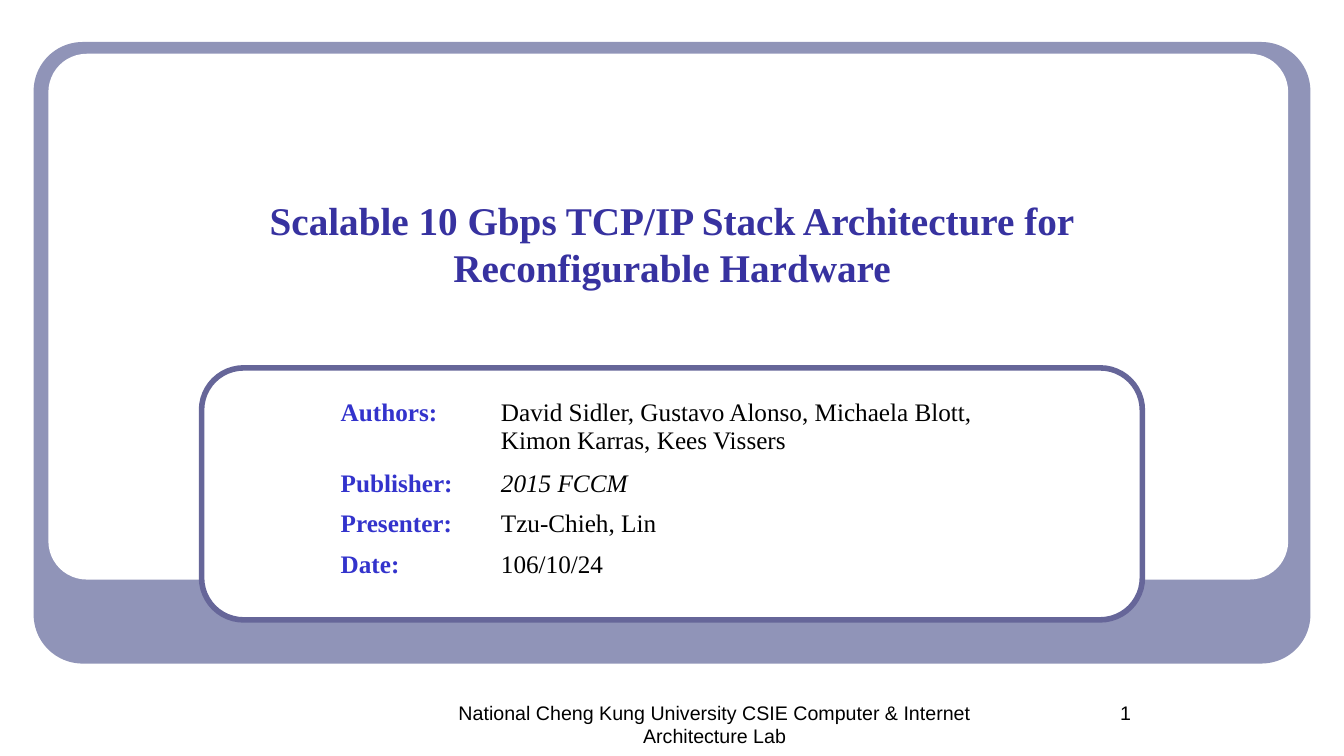
from dataclasses import dataclass

from pptx import Presentation
from pptx.dml.color import RGBColor
from pptx.enum.shapes import MSO_SHAPE
from pptx.enum.text import MSO_ANCHOR, PP_ALIGN
from pptx.util import Inches, Pt

ROUNDED = MSO_SHAPE.ROUNDED_RECTANGLE
MIDDLE = MSO_ANCHOR.MIDDLE
TOP = MSO_ANCHOR.TOP
CENTER = PP_ALIGN.CENTER
LEFT = PP_ALIGN.LEFT
COLUMNS, ROWS = 40, 90
COLUMN, ROW = Inches(13.333) / COLUMNS, Inches(7.5) / ROWS


@dataclass(frozen=True)
class Theme:
    """Colours, fonts and type sizes of the deck."""
    white: str = "FFFFFF"
    band: str = "9094B8"
    outline: str = "666699"
    title: str = "3732A0"
    label: str = "3333CC"
    ink: str = "000000"
    serif: str = "Times New Roman"
    sans: str = "Arial"
    title_size: int = 28
    body_size: int = 18
    footer_size: int = 14


THEME = Theme()
DETAILS = [
    ("Authors:", ["David Sidler, Gustavo Alonso, Michaela Blott,",
                  "Kimon Karras, Kees Vissers"], False, 0.65),
    ("Publisher:", ["2015 FCCM"], True, 0.38),
    ("Presenter:", ["Tzu-Chieh, Lin"], False, 0.41),
    ("Date:", ["106/10/24"], False, 0.41),
]


def grid(left, top, width, height):
    """Turn grid columns and rows into slide lengths."""
    return (round(left * COLUMN), round(top * ROW),
            round(width * COLUMN), round(height * ROW))


def write(tf, lines, size, color, font=THEME.serif, bold=False, italic=False,
          align=LEFT, anchor=TOP):
    """Fill a text frame with one formatted paragraph per line."""
    tf.word_wrap = True
    tf.vertical_anchor = anchor
    for i, line in enumerate(lines):
        p = tf.paragraphs[0] if i == 0 else tf.add_paragraph()
        p.alignment = align
        p.text = line
        for r in p.runs:
            r.font.name, r.font.size = font, Pt(size)
            r.font.bold, r.font.italic = bold, italic
            r.font.color.rgb = RGBColor.from_string(color)


def add_panel(s, box, radius, fill, line=None):
    """Draw one rounded panel in the box."""
    sp = s.shapes.add_shape(ROUNDED, *grid(*box))
    sp.shadow.inherit = False
    sp.adjustments[0] = radius
    sp.fill.solid()
    sp.fill.fore_color.rgb = RGBColor.from_string(fill)
    if line:
        sp.line.color.rgb = RGBColor.from_string(line)
        sp.line.width = Pt(4)
    else:
        sp.line.fill.background()
    return sp


def add_title(s, box, lines, backdrop):
    """Place the title in the box, in front of the backdrop."""
    sp = s.shapes.title
    sp.left, sp.top, sp.width, sp.height = grid(*box)
    backdrop.element.addnext(sp.element)
    write(sp.text_frame, lines, THEME.title_size, THEME.title,
          bold=True, align=CENTER, anchor=MIDDLE)
    sp.text_frame.margin_top = Inches(0.52)
    for p in sp.text_frame.paragraphs:
        p.space_before = Pt(0)


def add_details(s, box, details):
    """Lay out labels and values as a plain table in the box."""
    left, top, width, height = grid(*box)
    table = s.shapes.add_table(len(details), 2, left, top, width, height).table
    table.first_row = table.horz_banding = False
    table.columns[0].width = Inches(1.59)
    table.columns[1].width = width - Inches(1.59)
    for i, (label, lines, italic, row_height) in enumerate(details):
        table.rows[i].height = Inches(row_height)
        name, value = table.cell(i, 0), table.cell(i, 1)
        name.fill.background()
        value.fill.background()
        write(name.text_frame, [label], THEME.body_size, THEME.label, bold=True)
        write(value.text_frame, lines, THEME.body_size, THEME.ink, italic=italic)


def add_footer(s, box, text):
    """Write one centred footer text in the box."""
    sp = s.shapes.add_textbox(*grid(*box))
    write(sp.text_frame, [text], THEME.footer_size, THEME.ink,
          font=THEME.sans, align=CENTER)


def add_cover(prs):
    """Build the cover slide."""
    s = prs.slides.add_slide(prs.slide_layouts[5])
    add_panel(s, (1, 5, 38, 74), 0.079, THEME.band)
    add_panel(s, (1.44, 6.4, 36.9, 62.6), 0.073, THEME.white)
    card = add_panel(s, (6, 43.8, 28, 30), 0.167, THEME.white, THEME.outline)
    add_title(s, (3, 11.3, 34, 29.8),
              ["Scalable 10 Gbps TCP/IP Stack Architecture for",
               "Reconfigurable Hardware"], card)
    add_footer(s, (12.45, 82.8, 17.64, 6),
               "National Cheng Kung University CSIE Computer & Internet "
               "Architecture Lab")
    add_footer(s, (30, 82.8, 7, 6), "1")
    add_details(s, (9.84, 46.9, 20.07, 22.2), DETAILS)


def main():
    """Create and save the deck."""
    prs = Presentation()
    prs.slide_width, prs.slide_height = Inches(13.333), Inches(7.5)
    add_cover(prs)
    prs.save("out.pptx")


if __name__ == "__main__":
    main()
